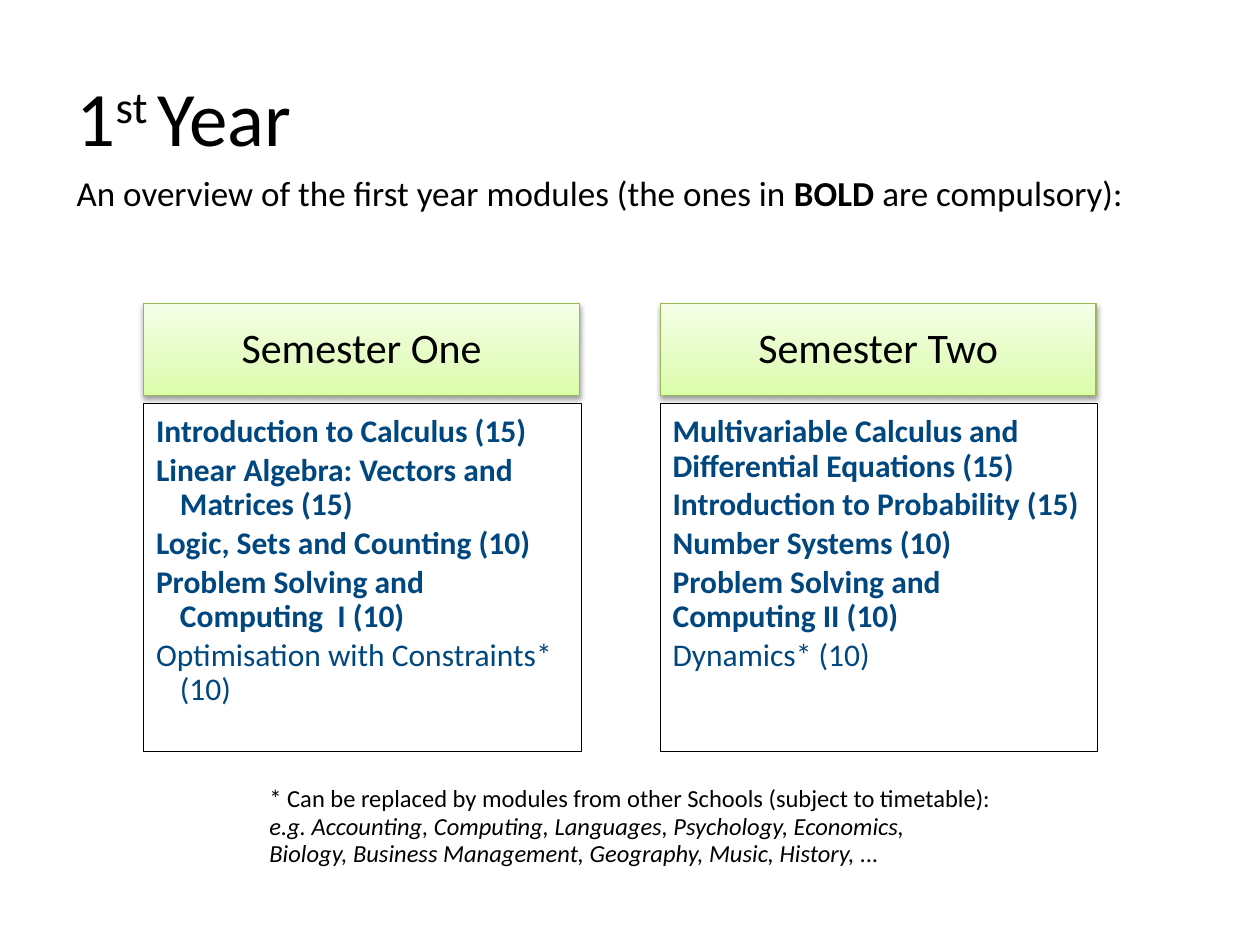
from dataclasses import dataclass

from lxml.etree import SubElement
from pptx import Presentation
from pptx.dml.color import RGBColor
from pptx.enum.shapes import MSO_SHAPE
from pptx.enum.text import MSO_ANCHOR, PP_ALIGN
from pptx.oxml.ns import qn
from pptx.shapes.autoshape import Shape
from pptx.slide import Slide
from pptx.text.text import TextFrame, _Paragraph
from pptx.util import Inches, Pt

COLORS = {
    "text": "000000",
    "module": "00477F",
    "panel": "FFFFFF",
    "border": "98B955",
    "shadow": "000000",
}
HEADER_STOPS = ((0, "DAFDA7"), (35, "E4FCC2"), (100, "F5FFE7"))
FONT = "Calibri"


@dataclass(frozen=True)
class Semester:
    title: str
    left: float
    hanging: float
    compulsory: tuple[str, ...]
    optional: str


SEMESTERS = (
    Semester(
        "Semester One", 1.14, 0.19,
        (
            "Introduction to Calculus (15)",
            "Linear Algebra: Vectors and Matrices (15)",
            "Logic, Sets and Counting (10)",
            "Problem Solving and Computing  I (10)",
        ),
        "Optimisation with Constraints* (10)",
    ),
    Semester(
        "Semester Two", 5.24, 0,
        (
            "Multivariable Calculus and Differential Equations (15)",
            "Introduction to Probability (15)",
            "Number Systems (10)",
            "Problem Solving and Computing II (10)",
        ),
        "Dynamics* (10)",
    ),
)
NOTES = (
    ("* Can be replaced by modules from other Schools (subject to timetable):", False),
    ("e.g. Accounting, Computing, Languages, Psychology, Economics,", True),
    ("Biology, Business Management, Geography, Music, History, ...", True),
)


def style(paragraph: _Paragraph, size: float, color: str = "text",
          bold: bool = False, italic: bool = False) -> None:
    font = paragraph.font
    font.name, font.size = FONT, Pt(size)
    font.bold, font.italic = bold, italic
    font.color.rgb = RGBColor.from_string(COLORS[color])


def indent(paragraph: _Paragraph, margin: float, first: float = 0) -> None:
    properties = paragraph._p.get_or_add_pPr()
    properties.set("marL", str(Inches(margin)))
    properties.set("indent", str(Inches(first)))


def paragraph_at(frame: TextFrame, index: int) -> _Paragraph:
    return frame.add_paragraph() if index else frame.paragraphs[0]


def add_text(page: Slide, left: float, top: float, width: float, height: float) -> TextFrame:
    box = page.shapes.add_textbox(Inches(left), Inches(top), Inches(width), Inches(height))
    box.text_frame.word_wrap = True
    return box.text_frame


def add_box(page: Slide, left: float, top: float, width: float, height: float,
            line: str, weight: float, insets: tuple[float, ...]) -> Shape:
    box = page.shapes.add_shape(
        MSO_SHAPE.RECTANGLE, Inches(left), Inches(top), Inches(width), Inches(height))
    box.shadow.inherit = False
    box.line.color.rgb = RGBColor.from_string(COLORS[line])
    box.line.width = Pt(weight)
    frame = box.text_frame
    frame.word_wrap = True
    frame.margin_left, frame.margin_top, frame.margin_right, frame.margin_bottom = map(
        Inches, insets)
    return box


def shade_header(box: Shape) -> None:
    box.fill.gradient()
    box.fill.gradient_angle = 90
    properties = box._element.spPr
    stops = properties.find(qn("a:gradFill")).find(qn("a:gsLst"))
    for stop in list(stops):
        stops.remove(stop)
    for position, color in HEADER_STOPS:
        stop = SubElement(stops, qn("a:gs"), pos=str(position * 1000))
        SubElement(stop, qn("a:srgbClr"), val=color)
    shadow = SubElement(
        properties.find(qn("a:effectLst")), qn("a:outerShdw"),
        blurRad=str(Pt(3.1)), dist=str(Pt(1.6)), dir="5400000", rotWithShape="0")
    tint = SubElement(shadow, qn("a:srgbClr"), val=COLORS["shadow"])
    SubElement(tint, qn("a:alpha"), val="38000")


def draw_semester(page: Slide, semester: Semester) -> None:
    header = add_box(page, semester.left, 2.41, 3.46, 0.73, "border", 0.75,
                     (0.19, 0.11, 0.19, 0.11))
    shade_header(header)
    header.text_frame.vertical_anchor = MSO_ANCHOR.MIDDLE
    heading = header.text_frame.paragraphs[0]
    heading.text = semester.title
    heading.alignment = PP_ALIGN.CENTER
    heading.line_spacing = 0.9
    style(heading, 24)

    panel = add_box(page, semester.left, 3.2, 3.47, 2.76, "text", 0.25,
                    (0.1, 0.1, 0.14, 0.16))
    panel.fill.solid()
    panel.fill.fore_color.rgb = RGBColor.from_string(COLORS["panel"])
    panel.text_frame.vertical_anchor = MSO_ANCHOR.TOP
    for index, module in enumerate((*semester.compulsory, semester.optional)):
        paragraph = paragraph_at(panel.text_frame, index)
        paragraph.text = module
        paragraph.alignment = PP_ALIGN.LEFT
        paragraph.line_spacing = 0.9
        paragraph.space_after = Pt(2.7)
        indent(paragraph, semester.hanging, -semester.hanging)
        style(paragraph, 18, "module", bold=module in semester.compulsory)


def draw_title(page: Slide) -> None:
    frame = add_text(page, 0.51, 0.29, 9, 1.25)
    frame.vertical_anchor = MSO_ANCHOR.MIDDLE
    paragraph = frame.paragraphs[0]
    for text in ("1", "st ", "Year"):
        span = paragraph.add_run()
        span.text = text
        if text == "st ":
            span.font._element.set("baseline", "30000")
    style(paragraph, 44)


def draw_overview(page: Slide) -> None:
    paragraph = add_text(page, 0.51, 1.31, 9, 1.21).paragraphs[0]
    for text, bold in (
        ("An overview of the first year modules (the ones in", False),
        (" BOLD ", True),
        ("are compulsory):", False),
    ):
        span = paragraph.add_run()
        span.text = text
        span.font.bold = bold
    style(paragraph, 20)


def draw_notes(page: Slide) -> None:
    frame = add_text(page, 1.54, 6.19, 7.8, 0.76)
    for index, (text, italic) in enumerate(NOTES):
        paragraph = paragraph_at(frame, index)
        paragraph.text = text
        paragraph.line_spacing = 0.93
        indent(paragraph, 0.5)
        style(paragraph, 14, italic=italic)


def main() -> None:
    deck = Presentation()
    deck.slide_width, deck.slide_height = Inches(10), Inches(7.5)
    page = deck.slides.add_slide(deck.slide_layouts[6])
    draw_title(page)
    draw_overview(page)
    for semester in SEMESTERS:
        draw_semester(page, semester)
    draw_notes(page)
    deck.save("out.pptx")


if __name__ == "__main__":
    main()
